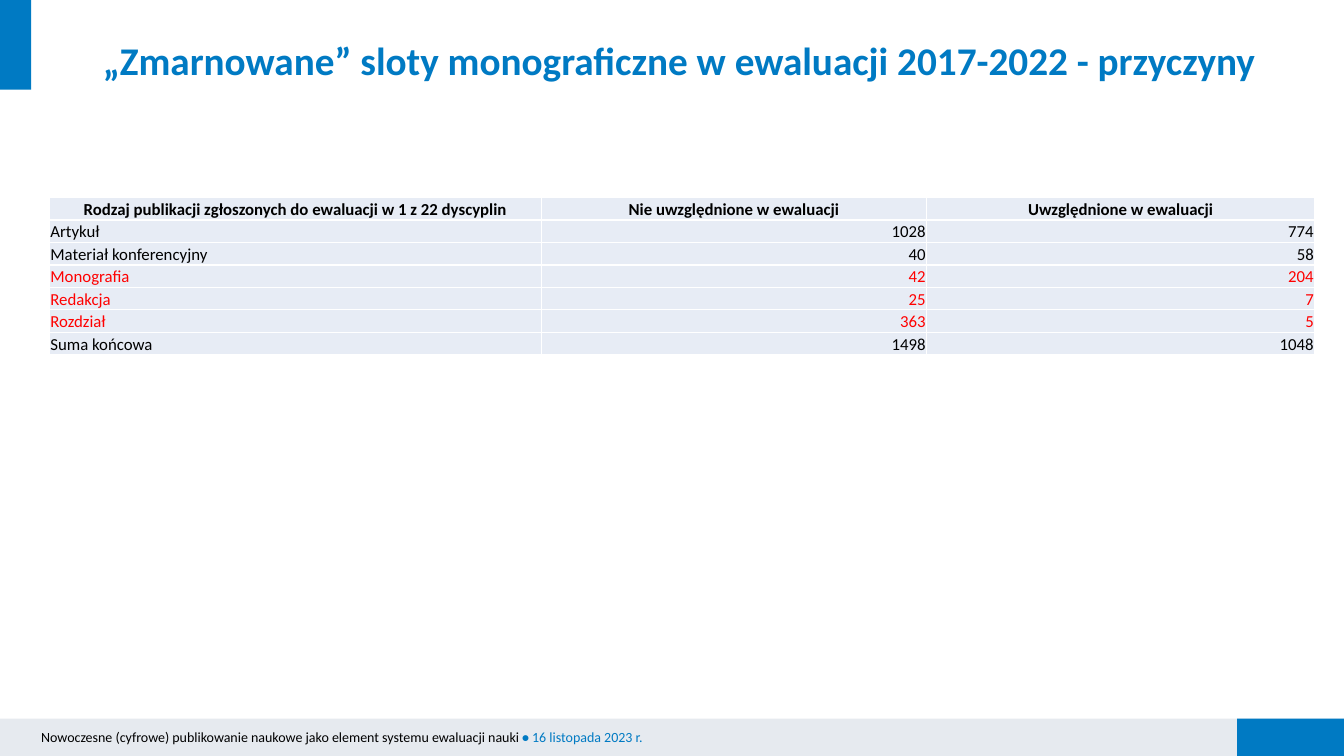
from dataclasses import dataclass

from lxml.etree import SubElement
from pptx import Presentation
from pptx.dml.color import RGBColor
from pptx.enum.shapes import MSO_SHAPE
from pptx.enum.text import MSO_ANCHOR as Anchor, MSO_AUTO_SIZE as AutoSize, PP_ALIGN as Align
from pptx.oxml.ns import qn
from pptx.util import Inches, Pt


@dataclass(frozen=True)
class Theme:
    font: str = "Calibri"
    blue: str = "007AC3"
    footer_gray: str = "E6EAEF"
    cell: str = "E7ECF5"
    border: str = "FFFFFF"
    ink: str = "000000"
    alert: str = "FF0000"
    title_size: int = 28
    table_size: int = 12
    footer_size: int = 10


THEME = Theme()

TITLE = "„Zmarnowane” sloty monograficzne w ewaluacji 2017-2022 - przyczyny"
HEADER = (
    "Rodzaj publikacji zgłoszonych do ewaluacji w 1 z 22 dyscyplin",
    "Nie uwzględnione w ewaluacji",
    "Uwzględnione w ewaluacji",
)
PUBLICATIONS = (
    ("Artykuł", 1028, 774),
    ("Materiał konferencyjny", 40, 58),
    ("Monografia", 42, 204),
    ("Redakcja", 25, 7),
    ("Rozdział", 363, 5),
    ("Suma końcowa", 1498, 1048),
)
HIGHLIGHTED = {"Monografia", "Redakcja", "Rozdział"}
COLUMN_WIDTHS = (4.88, 3.82, 3.85)
ROW_HEIGHT = 1.56 / 7


def write(paragraph, text, *, size, color=THEME.ink, bold=False, align=Align.LEFT):
    """Append a formatted run to the paragraph."""
    paragraph.alignment = align
    run = paragraph.add_run()
    run.text = text
    run.font.name = THEME.font
    run.font.size = Pt(size)
    run.font.bold = bold
    run.font.color.rgb = RGBColor.from_string(color)


def add_bar(slide, left, top, width, height, color):
    bar = slide.shapes.add_shape(
        MSO_SHAPE.RECTANGLE, Inches(left), Inches(top), Inches(width), Inches(height)
    )
    bar.shadow.inherit = False
    bar.fill.solid()
    bar.fill.fore_color.rgb = RGBColor.from_string(color)
    bar.line.fill.background()


def set_title(slide):
    title = slide.shapes.title
    title.left, title.top = Inches(0.92), Inches(0.36)
    title.width, title.height = Inches(12.42), Inches(0.53)
    frame = title.text_frame
    frame.word_wrap = True
    frame.auto_size = AutoSize.SHAPE_TO_FIT_TEXT
    frame.vertical_anchor = Anchor.MIDDLE
    heading = frame.paragraphs[0]
    heading.line_spacing = 0.9
    write(heading, TITLE, size=THEME.title_size, color=THEME.blue, bold=True)


def add_footer(slide):
    box = slide.shapes.add_textbox(Inches(0.31), Inches(7.18), Inches(9.33), Inches(0.27))
    frame = box.text_frame
    frame.word_wrap = True
    frame.auto_size = AutoSize.SHAPE_TO_FIT_TEXT
    line = frame.paragraphs[0]
    event = "Nowoczesne (cyfrowe) publikowanie naukowe jako element systemu ewaluacji nauki "
    write(line, event, size=THEME.footer_size)
    write(line, "• ", size=THEME.footer_size, color=THEME.blue, bold=True)
    write(line, "16 listopada 2023 r.", size=THEME.footer_size, color=THEME.blue)


def style_cell(cell):
    """Set insets, borders and fill; borders precede the fill in the XML."""
    cell.margin_left = cell.margin_right = cell.margin_top = Inches(0.01)
    cell.margin_bottom = 0
    cell.vertical_anchor = Anchor.BOTTOM
    properties = cell._tc.get_or_add_tcPr()
    for side in ("a:lnL", "a:lnR", "a:lnT", "a:lnB"):
        border = SubElement(properties, qn(side), w=str(Pt(1)))
        fill = SubElement(border, qn("a:solidFill"))
        SubElement(fill, qn("a:srgbClr"), val=THEME.border)
    cell.fill.solid()
    cell.fill.fore_color.rgb = RGBColor.from_string(THEME.cell)


def add_publication_table(slide):
    rows = (HEADER, *PUBLICATIONS)
    table = slide.shapes.add_table(
        len(rows), len(HEADER), Inches(0.49), Inches(1.96),
        Inches(sum(COLUMN_WIDTHS)), Inches(ROW_HEIGHT * len(rows)),
    ).table
    table.horz_banding = False
    for column, width in zip(table.columns, COLUMN_WIDTHS):
        column.width = Inches(width)
    for row_index, values in enumerate(rows):
        is_header = row_index == 0
        color = THEME.alert if values[0] in HIGHLIGHTED else THEME.ink
        for column_index, value in enumerate(values):
            cell = table.cell(row_index, column_index)
            style_cell(cell)
            body_align = Align.RIGHT if column_index else Align.LEFT
            write(
                cell.text_frame.paragraphs[0], str(value), size=THEME.table_size,
                color=color, bold=is_header,
                align=Align.CENTER if is_header else body_align,
            )


def main():
    deck = Presentation()
    deck.slide_width, deck.slide_height = Inches(13.33), Inches(7.5)
    slide = deck.slides.add_slide(deck.slide_layouts[5])
    add_bar(slide, 0, 7.13, 13.33, 0.37, THEME.footer_gray)
    add_bar(slide, 0, 0, 0.31, 0.89, THEME.blue)
    add_bar(slide, 12.27, 7.13, 1.06, 0.37, THEME.blue)
    add_footer(slide)
    add_publication_table(slide)
    set_title(slide)
    deck.save("out.pptx")


if __name__ == "__main__":
    main()
